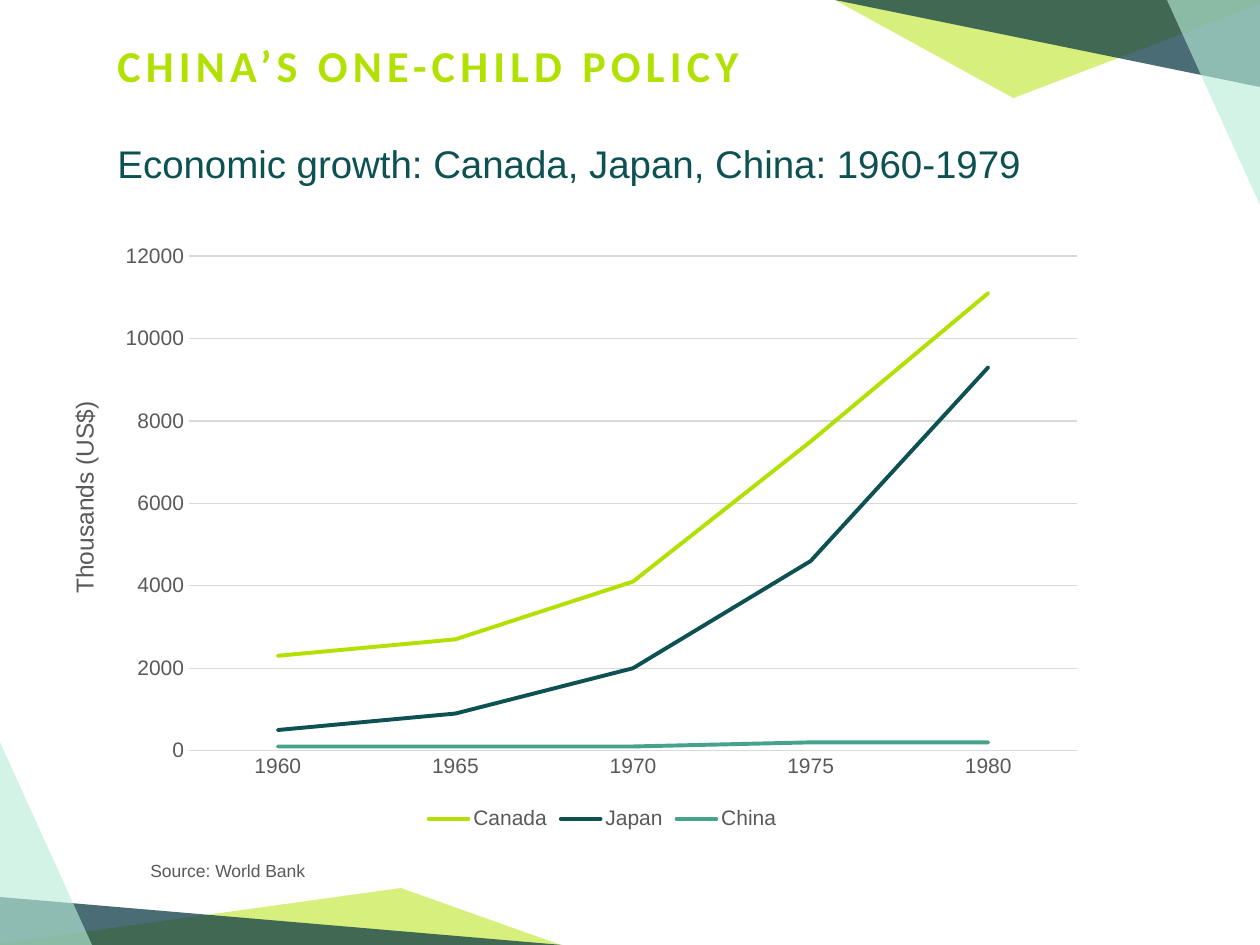
from lxml import etree
from pptx import Presentation
from pptx import util as u
from pptx.chart.data import CategoryChartData
from pptx.dml.color import RGBColor
from pptx.enum import chart as charts, shapes, text
from pptx.oxml import parse_xml
from pptx.oxml.ns import nsdecls, qn

PX = 914400 / 126
LIME = RGBColor(0xB1, 0xE0, 0x01)
NAVY = RGBColor(0x08, 0x36, 0x43)
MINT = RGBColor(0xB8, 0xEC, 0xD7)
TEAL = RGBColor(0x0D, 0x51, 0x52)
GREEN = RGBColor(0x45, 0xA3, 0x8B)
GRAY = RGBColor(0x59, 0x59, 0x59)
RULE = RGBColor(0xD9, 0xD9, 0xD9)

YEARS = ["1960", "1965", "1970", "1975", "1980"]
GROWTH = [
    ("Canada", LIME, [2300, 2700, 4100, 7500, 11100]),
    ("Japan", TEAL, [500, 900, 2000, 4600, 9300]),
    ("China", GREEN, [100, 100, 100, 200, 200]),
]
PLOT_AREA = {"x": 0.082, "y": 0.141, "w": 0.898, "h": 0.734}

TITLE = {"name": "Calibri", "size": u.Pt(25.2), "bold": True}
SUBTITLE = {"name": "Arial", "size": u.Pt(22)}
AXIS_TITLE = {"name": "Arial", "size": u.Pt(14)}
SMALL = {"name": "Arial", "size": u.Pt(10)}
CHART_TEXT = {"name": "Arial", "size": u.Pt(12), "bold": False}


def emu(*lengths):
    return [u.Emu(round(length * PX)) for length in lengths]


def set_font(font, values, color):
    for key, value in values.items():
        setattr(font, key, value)
    font.color.rgb = color


def add_text(page, box, words, font, color, anchor=text.MSO_ANCHOR.TOP,
             align=text.PP_ALIGN.LEFT, turn=0, spacing=0):
    """Place one line of text; spacing is in hundredths of a point."""
    label = page.shapes.add_textbox(*emu(*box))
    label.rotation = turn
    frame = label.text_frame
    frame.word_wrap = True
    frame.vertical_anchor = anchor
    para = frame.paragraphs[0]
    para.alignment = align
    span = para.add_run()
    span.text = words
    set_font(span.font, font, color)
    if spacing:
        span.font._element.set("spc", str(spacing))


def add_corner(page, box, triangles, turn):
    """Overlap translucent triangles given as (kind, place, tip, color, alpha %)."""
    for kind, (left, top, width, height), tip, color, alpha in triangles:
        place = emu(box[0] + left, box[1] + top, width, height)
        shape = page.shapes.add_shape(kind, *place)
        shape.rotation = turn
        shape.shadow.inherit = False
        if tip is not None:
            shape.adjustments[0] = tip
        shape.fill.solid()
        shape.fill.fore_color.rgb = color
        tint = shape.fill._xPr.find(".//" + qn("a:srgbClr"))
        etree.SubElement(tint, qn("a:alpha")).set("val", str(alpha * 1000))
        shape.line.fill.background()


def fix_plot_area(chart):
    """Pin the inner plot area to fixed fractions of the chart."""
    area = chart._chartSpace.chart.plotArea
    for old in area.findall(qn("c:layout")):
        area.remove(old)
    lengths = "".join(f'<c:{key} val="{value}"/>' for key, value in PLOT_AREA.items())
    area.insert(0, parse_xml(
        f'<c:layout {nsdecls("c")}><c:manualLayout><c:layoutTarget val="inner"/>'
        f'<c:xMode val="edge"/><c:yMode val="edge"/>{lengths}'
        '</c:manualLayout></c:layout>'))


def style_rule(line):
    line.color.rgb = RULE
    line.width = u.Pt(0.75)


def add_growth_chart(page, box):
    table = CategoryChartData(number_format="0")
    table.categories = YEARS
    for country, _, values in GROWTH:
        table.add_series(country, values)
    chart = page.shapes.add_chart(charts.XL_CHART_TYPE.LINE, *emu(*box), table).chart
    chart.has_title = False
    set_font(chart.font, CHART_TEXT, GRAY)
    chart.has_legend = True
    chart.legend.position = charts.XL_LEGEND_POSITION.BOTTOM
    chart.legend.include_in_layout = False
    set_font(chart.legend.font, CHART_TEXT, GRAY)

    for axis in (chart.category_axis, chart.value_axis):
        axis.major_tick_mark = axis.minor_tick_mark = charts.XL_TICK_MARK.NONE
        set_font(axis.tick_labels.font, CHART_TEXT, GRAY)
    style_rule(chart.category_axis.format.line)
    values_axis = chart.value_axis
    values_axis.minimum_scale, values_axis.maximum_scale = 0, 12000
    values_axis.major_unit = 2000
    values_axis.format.line.fill.background()
    style_rule(values_axis.major_gridlines.format.line)

    plot = chart.plots[0]
    plot.vary_by_categories = False
    for series, (_, color, _) in zip(plot.series, GROWTH):
        series.smooth = False
        series.marker.style = charts.XL_MARKER_STYLE.NONE
        series.format.line.color.rgb = color
        series.format.line.width = u.Pt(2.25)
        series.format.line._ln.set("cap", "rnd")
    fix_plot_area(chart)


def add_corners(page):
    peak = shapes.MSO_SHAPE.ISOSCELES_TRIANGLE
    wedge = shapes.MSO_SHAPE.RIGHT_TRIANGLE
    add_corner(page, (835, 0), [
        (peak, (0, 0, 435, 98), 0.59, LIME, 51),
        (wedge, (0, 0, 425, 87), None, NAVY, 73),
        (peak, (332, 0, 93, 205), 0, MINT, 63),
    ], turn=180)
    add_corner(page, (-1, 740), [
        (peak, (-10, 148, 572, 57), 0.72, LIME, 51),
        (wedge, (0, 157, 563, 48), None, NAVY, 73),
        (peak, (0, 0, 93, 205), 0, MINT, 63),
    ], turn=0)


def main():
    deck = Presentation()
    deck.slide_width, deck.slide_height = emu(1260, 945)
    page = deck.slides.add_slide(deck.slide_layouts[6])
    add_corners(page)
    add_text(page, (105, 33, 731, 65), "CHINA’S ONE-CHILD POLICY", TITLE, LIME,
             anchor=text.MSO_ANCHOR.BOTTOM, spacing=300)
    add_growth_chart(page, (108, 161, 989, 674))
    add_text(page, (138, 854, 217, 34), "Source: World Bank", SMALL, GRAY)
    add_text(page, (105, 134, 992, 59),
             "Economic growth: Canada, Japan, China: 1960-1979", SUBTITLE, TEAL)
    add_text(page, (-31, 476, 231, 43), "Thousands (US$)", AXIS_TITLE, GRAY,
             align=text.PP_ALIGN.CENTER, turn=270)
    deck.save("out.pptx")


if __name__ == "__main__":
    main()
